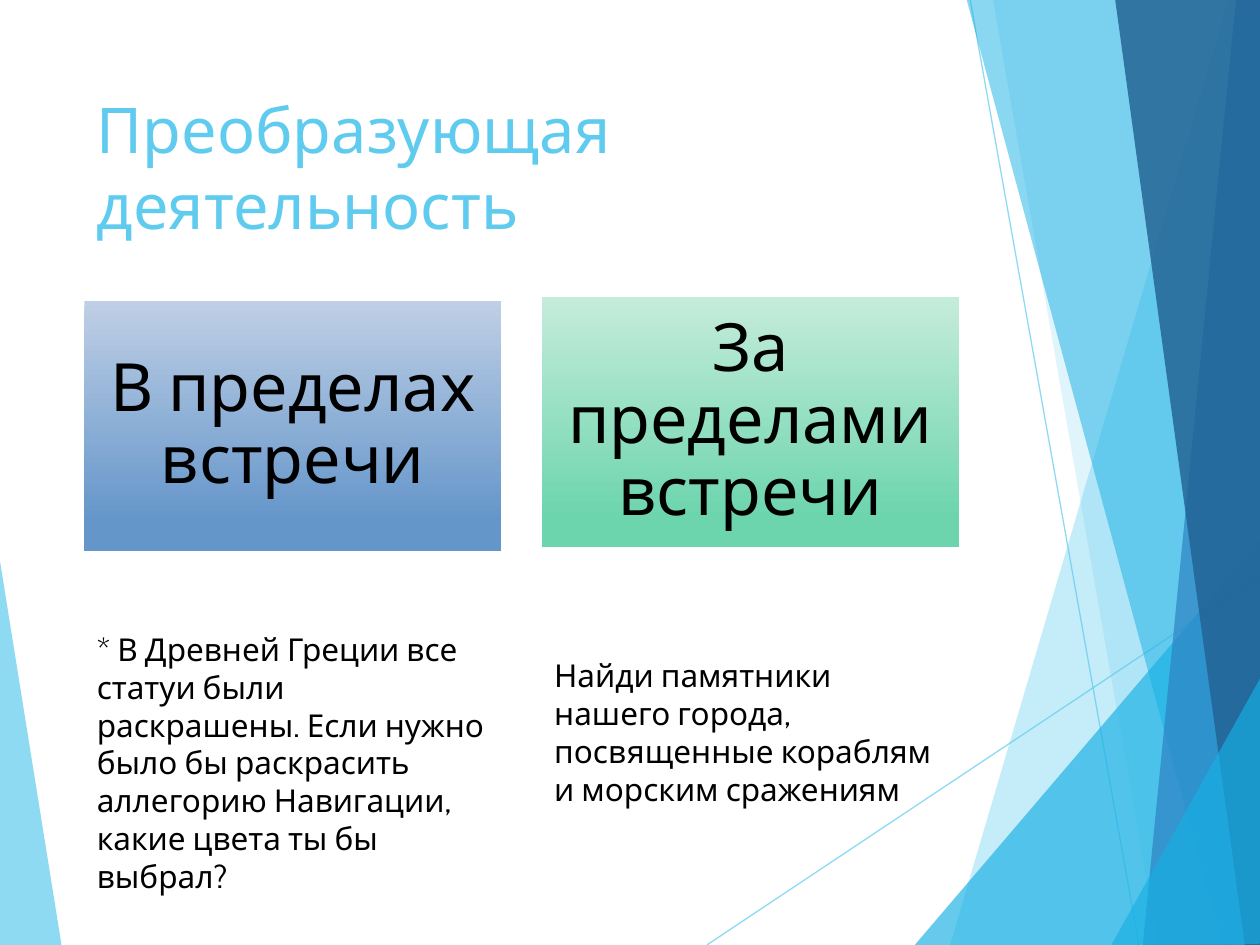
"""Build a slide on transforming activity with two headed columns and a faceted edge."""
from typing import NamedTuple

from lxml import etree
from pptx import Presentation
from pptx.dml.color import RGBColor
from pptx.enum.shapes import MSO_CONNECTOR, MSO_SHAPE
from pptx.enum.text import MSO_ANCHOR, PP_ALIGN
from pptx.oxml.ns import qn
from pptx.util import Inches, Pt

RECTANGLE = MSO_SHAPE.RECTANGLE
STRAIGHT = MSO_CONNECTOR.STRAIGHT
TOP, MIDDLE = MSO_ANCHOR.TOP, MSO_ANCHOR.MIDDLE
LEFT, CENTER = PP_ALIGN.LEFT, PP_ALIGN.CENTER

FONT = "Cabin"
BLACK = RGBColor(0x00, 0x00, 0x00)
SKY = RGBColor(0x5F, 0xCB, 0xEF)
CYAN = RGBColor(0x17, 0xB0, 0xE4)
BLUE = RGBColor(0x2E, 0x83, 0xC3)
NAVY = RGBColor(0x22, 0x62, 0x92)
BLUE_LIGHT = RGBColor(0xBF, 0xCF, 0xE5)
BLUE_DEEP = RGBColor(0x65, 0x96, 0xCA)
GREEN_LIGHT = RGBColor(0xC5, 0xEC, 0xDB)
GREEN_DEEP = RGBColor(0x6D, 0xD5, 0xAE)

COLUMN_WIDTH = 3.31
HEADING_HEIGHT = 1.98


class Facet(NamedTuple):
    points: list[tuple[float, float]]
    color: RGBColor
    opacity: int


class Ray(NamedTuple):
    start: tuple[float, float]
    end: tuple[float, float]


class Column(NamedTuple):
    left: float
    heading_top: float
    heading: str
    light: RGBColor
    deep: RGBColor
    body_top: float
    body_height: float
    body: str


LEFT_FACET = Facet([(-0.01, 4.39), (0.49, 7.51), (-0.01, 7.5)], SKY, 70)
RAYS = [Ray((5.61, 7.5), (10.01, 4.57)), Ray((7.7, 0), (9.04, 7.5))]
RIGHT_FACETS = [
    Facet([(9.75, 0), (7.54, 7.5), (10.02, 7.51), (10.01, 0.01)], SKY, 36),
    Facet([(7.88, -0.01), (9.19, 7.5), (10.01, 7.5), (10.01, -0.01)], SKY, 20),
    Facet([(7.26, 7.5), (10, 4.29), (10.01, 7.5)], CYAN, 66),
    Facet([(7.67, -0.01), (9.7, 7.5), (10.01, 7.49), (10.01, -0.01)], CYAN, 50),
    Facet([(9.81, -0.01), (9.07, 7.5), (10.01, 7.5), (10, -0.01)], BLUE, 70),
    Facet([(8.85, -0.01), (9.88, 7.5), (10.02, 7.5), (10, -0.01)], NAVY, 82),
    Facet([(8.82, 7.5), (10.02, 5.35), (10.02, 7.49)], CYAN, 66),
]
COLUMNS = [
    Column(0.67, 2.39, "В пределах встречи", BLUE_LIGHT, BLUE_DEEP, 4.95, 2.22,
           "* В Древней Греции все статуи были раскрашены. Если нужно было бы "
           "раскрасить аллегорию Навигации, какие цвета ты бы выбрал?"),
    Column(4.3, 2.36, "За пределами встречи", GREEN_LIGHT, GREEN_DEEP, 5.16, 1.31,
           "Найди памятники нашего города, посвященные кораблям и морским "
           "сражениям"),
]


def set_opacity(properties, percent: int) -> None:
    color = next(properties.iter(qn("a:srgbClr")))
    etree.SubElement(color, qn("a:alpha")).set("val", str(percent * 1000))


def draw_facet(slide, facet: Facet) -> None:
    points = [(Inches(x), Inches(y)) for x, y in facet.points]
    builder = slide.shapes.build_freeform(*points[0])
    builder.add_line_segments(points[1:])
    outline = builder.convert_to_shape()
    outline.shadow.inherit = False
    outline.fill.solid()
    outline.fill.fore_color.rgb = facet.color
    outline.line.fill.background()
    set_opacity(outline.fill._xPr, facet.opacity)


def draw_ray(slide, ray: Ray) -> None:
    connector = slide.shapes.add_connector(
        STRAIGHT, *map(Inches, ray.start + ray.end))
    connector.line.color.rgb = SKY
    connector.line.width = Pt(0.75)
    properties = connector._element.spPr
    set_opacity(properties, 70)
    etree.SubElement(properties, qn("a:effectLst"))


def write_text(shape, text: str, *, size: float, color: RGBColor = BLACK,
               align=LEFT, anchor=TOP, spacing: float = 1.0,
               inset: tuple[float, float] = (0.1, 0.05)) -> None:
    frame = shape.text_frame
    frame.word_wrap = True
    frame.vertical_anchor = anchor
    frame.margin_left = frame.margin_right = Inches(inset[0])
    frame.margin_top = frame.margin_bottom = Inches(inset[1])
    paragraph = frame.paragraphs[0]
    paragraph.alignment = align
    paragraph.line_spacing = spacing
    run = paragraph.add_run()
    run.text = text
    run.font.name = FONT
    run.font.size = Pt(size)
    run.font.color.rgb = color


def add_text(slide, left: float, top: float, width: float, height: float,
             text: str, **text_format) -> None:
    box = slide.shapes.add_textbox(*map(Inches, (left, top, width, height)))
    write_text(box, text, **text_format)


def draw_heading(slide, column: Column) -> None:
    panel = slide.shapes.add_shape(
        RECTANGLE, Inches(column.left), Inches(column.heading_top),
        Inches(COLUMN_WIDTH), Inches(HEADING_HEIGHT))
    panel.shadow.inherit = False
    panel.line.fill.background()
    panel.fill.gradient()
    panel.fill.gradient_angle = 270
    stops = zip(panel.fill.gradient_stops, (0, 0.88), (column.light, column.deep))
    for stop, position, color in stops:
        stop.position = position
        stop.color.rgb = color
    write_text(panel, column.heading, size=38, align=CENTER, anchor=MIDDLE,
               spacing=0.9, inset=(0.16, 0.16))


def main() -> None:
    presentation = Presentation()
    presentation.slide_width = Inches(10)
    presentation.slide_height = Inches(7.5)
    slide = presentation.slides.add_slide(presentation.slide_layouts[6])

    draw_facet(slide, LEFT_FACET)
    for ray in RAYS:
        draw_ray(slide, ray)
    for facet in RIGHT_FACETS:
        draw_facet(slide, facet)

    add_text(slide, 0.67, 0.67, 6.94, 1.44, "Преобразующая деятельность",
             size=36, color=SKY)
    for column in COLUMNS:
        draw_heading(slide, column)
    for column in COLUMNS:
        add_text(slide, column.left, column.body_top, COLUMN_WIDTH,
                 column.body_height, column.body, size=18)

    presentation.save("out.pptx")


if __name__ == "__main__":
    main()
